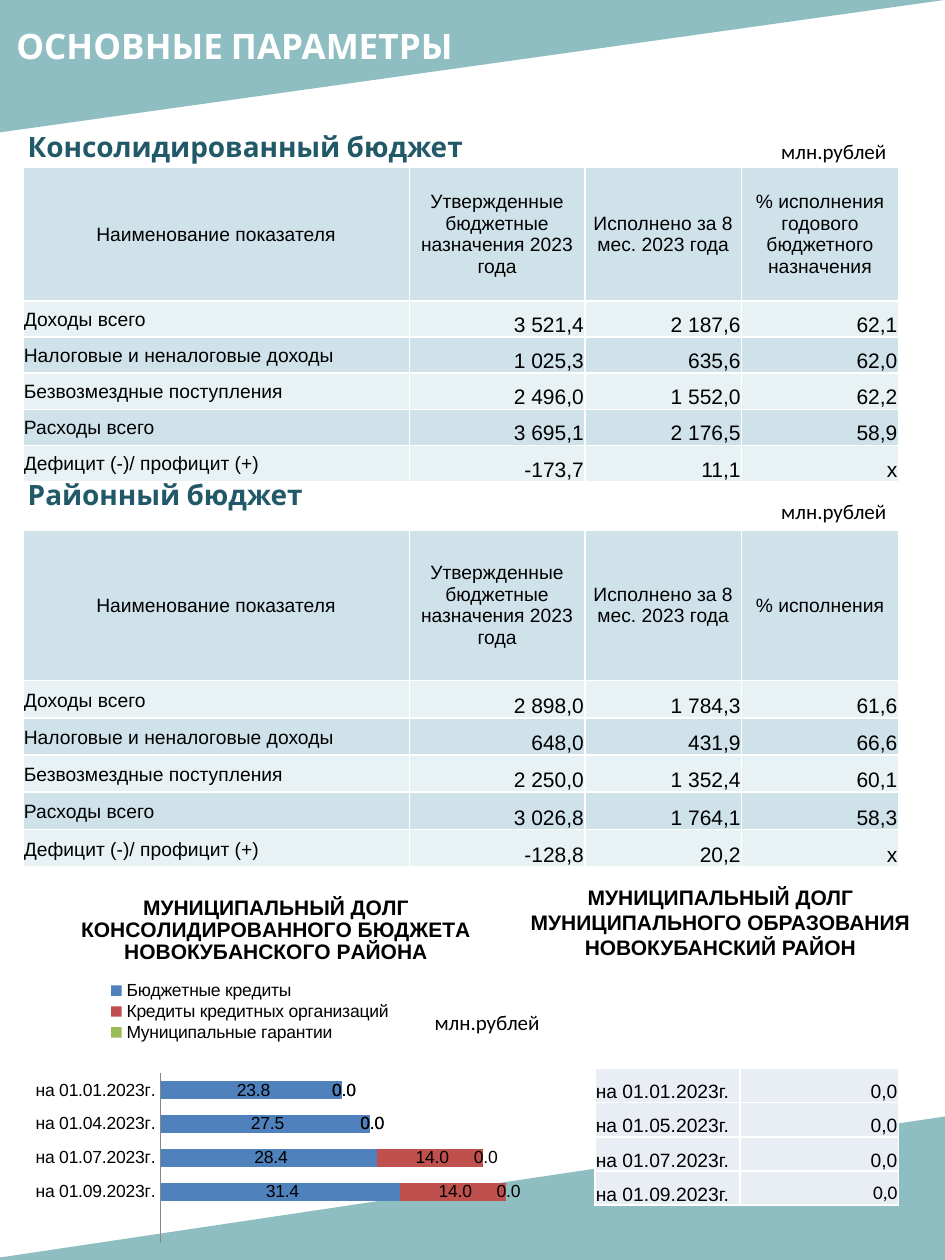
from collections import namedtuple
from dataclasses import dataclass

from lxml import etree
from pptx import Presentation
from pptx.chart.data import CategoryChartData
from pptx.dml.color import RGBColor
from pptx.enum.chart import XL_CHART_TYPE, XL_LEGEND_POSITION, XL_TICK_MARK
from pptx.enum.shapes import MSO_SHAPE
from pptx.enum.text import MSO_ANCHOR, PP_ALIGN
from pptx.oxml.ns import qn
from pptx.util import Cm, Pt

LEFT, CENTER, RIGHT = PP_ALIGN.LEFT, PP_ALIGN.CENTER, PP_ALIGN.RIGHT
MIDDLE, BOTTOM = MSO_ANCHOR.MIDDLE, MSO_ANCHOR.BOTTOM

Box = namedtuple("Box", "left top width height")  # centimetres


@dataclass(frozen=True)
class Theme:
    teal: str = "519AA0"
    heading: str = "215968"
    white: str = "FFFFFF"
    black: str = "000000"
    band_dark: str = "CFE2EA"
    band_light: str = "E8F1F4"
    debt_cell: str = "E9EDF4"
    axis: str = "868686"
    series: tuple = ("4F81BD", "C0504D", "9BBB59")
    display: str = "Cabin"
    body: str = "Arial"
    note: str = "Calibri"
    title_size: int = 20
    heading_size: int = 16
    figure_size: int = 12
    label_size: int = 11
    chart_size: int = 10


THEME = Theme()
UNIT = "млн.рублей"
INDICATORS = ["Доходы всего", "Налоговые и неналоговые доходы",
              "Безвозмездные поступления", "Расходы всего",
              "Дефицит (-)/ профицит (+)"]
CONSOLIDATED = [("3 521,4", "2 187,6", "62,1"), ("1 025,3", "635,6", "62,0"),
                ("2 496,0", "1 552,0", "62,2"), ("3 695,1", "2 176,5", "58,9"),
                ("-173,7", "11,1", "х")]
DISTRICT = [("2 898,0", "1 784,3", "61,6"), ("648,0", "431,9", "66,6"),
            ("2 250,0", "1 352,4", "60,1"), ("3 026,8", "1 764,1", "58,3"),
            ("-128,8", "20,2", "х")]
LOANS = {"Бюджетные кредиты": (23.8, 27.5, 28.4, 31.4, None),
         "Кредиты кредитных организаций": (0, 0, 14, 14, None),
         "Муниципальные гарантии": (0, 0, 0, 0, None)}


def color(code):
    return RGBColor.from_string(code)


def style_font(target, size, font=THEME.body, ink=THEME.black, bold=False):
    target.size, target.name, target.bold = Pt(size), font, bold
    target.color.rgb = color(ink)


def write(frame, text, align=LEFT, **style):
    """Fill a text frame, one paragraph per line of text."""
    frame.text = text
    for paragraph in frame.paragraphs:
        paragraph.alignment = align
        style_font(paragraph.runs[0].font, **style)


def add_text(slide, box, text, wrap=True, **style):
    frame = slide.shapes.add_textbox(*map(Cm, box)).text_frame
    frame.word_wrap = wrap
    write(frame, text, **style)


def add_unit(slide, left, top):
    add_text(slide, Box(left, top, 2.62, 0.76), UNIT, wrap=False,
             size=THEME.figure_size, font=THEME.note)


def add_wedge(slide, box, flip):
    wedge = slide.shapes.add_shape(MSO_SHAPE.RIGHT_TRIANGLE, *map(Cm, box))
    wedge.shadow.inherit = False
    wedge.line.fill.background()
    wedge.fill.solid()
    wedge.fill.fore_color.rgb = color(THEME.teal)
    tint = wedge.element.spPr.find(".//" + qn("a:srgbClr"))
    etree.SubElement(tint, qn("a:alpha"), val="64000")
    wedge.element.spPr.find(qn("a:xfrm")).set(flip, "1")


def add_grid(slide, box, columns, heights):
    """Add a plain table with the given column widths and row heights."""
    table = slide.shapes.add_table(len(heights), len(columns), *map(Cm, box)).table
    table.first_row = table.horz_banding = False
    for column, width in zip(table.columns, columns):
        column.width = Cm(width)
    for row, height in zip(table.rows, heights):
        row.height = Cm(height)
    return table


def fill_cell(cell, text, fill, anchor=BOTTOM, padding=(0.02, 0), **style):
    cell.margin_left = cell.margin_right = Cm(0.02)
    cell.margin_top, cell.margin_bottom = map(Cm, padding)
    cell.vertical_anchor = anchor
    write(cell.text_frame, text, **style)
    properties = cell._tc.get_or_add_tcPr()
    for side in ("a:lnL", "a:lnR", "a:lnT", "a:lnB"):
        border = etree.SubElement(properties, qn(side), w=str(Pt(0.96)))
        paint = etree.SubElement(border, qn("a:solidFill"))
        etree.SubElement(paint, qn("a:srgbClr"), val=THEME.white)
    cell.fill.solid()
    cell.fill.fore_color.rgb = color(fill)


def banner(slide, box):
    add_wedge(slide, box, "flipV")
    add_text(slide, Box(box.left + 0.08, box.top + 0.36, 12.37, 1.09),
             "ОСНОВНЫЕ ПАРАМЕТРЫ", size=THEME.title_size, font=THEME.display,
             ink=THEME.white, bold=True)


def budget_section(slide, box, name, share, figures, table_top, unit_top, header, row):
    """Heading, unit and table; the inner tops are offsets from the box."""
    add_text(slide, Box(box.left - 0.15, box.top, 12.37, 0.91), name,
             size=THEME.heading_size, font=THEME.display, ink=THEME.heading, bold=True)
    add_unit(slide, box.left + 15.04, box.top + unit_top)
    table = add_grid(slide, Box(box.left, box.top + table_top, box.width,
                                box.height - table_top),
                     (7.79, 3.54, 3.16, 3.16), [header] + [row] * len(figures))
    titles = ("Наименование показателя", "Утвержденные бюджетные назначения 2023 года",
              "Исполнено за 8 мес. 2023 года", share)
    label = {"size": THEME.label_size, "padding": (0.13, 0.13)}
    for index, title in enumerate(titles):
        fill_cell(table.cell(0, index), title, THEME.band_dark, anchor=MIDDLE,
                  align=CENTER, **label)
    for index, (indicator, values) in enumerate(zip(INDICATORS, figures), 1):
        band = THEME.band_light if index % 2 else THEME.band_dark
        fill_cell(table.cell(index, 0), indicator, band, **label)
        for place, value in enumerate(values, 1):
            fill_cell(table.cell(index, place), value, band, align=RIGHT,
                      size=THEME.figure_size)


def district_debt(slide, box):
    add_text(slide, Box(box.left, box.top, box.width, 2.31),
             "МУНИЦИПАЛЬНЫЙ ДОЛГ МУНИЦИПАЛЬНОГО ОБРАЗОВАНИЯ НОВОКУБАНСКИЙ РАЙОН",
             align=CENTER, size=THEME.figure_size, bold=True)
    months = ("01", "05", "07", "09")
    table = add_grid(slide, Box(box.left + 2.19, box.top + 3.84, 6.12, 2.76),
                     (2.93, 3.19), [0.69] * len(months))
    for row, month in enumerate(months):
        font = THEME.note if month == months[-1] else THEME.body
        fill_cell(table.cell(row, 0), f"на 01.{month}.2023г.", THEME.debt_cell,
                  size=THEME.label_size)
        fill_cell(table.cell(row, 1), "0,0", THEME.debt_cell, align=RIGHT,
                  size=THEME.label_size, font=font)


def manual_layout(inner=False, **fractions):
    layout = etree.Element(qn("c:layout"))
    manual = etree.SubElement(layout, qn("c:manualLayout"))
    if inner:
        etree.SubElement(manual, qn("c:layoutTarget"), val="inner")
    for axis in "xy":
        etree.SubElement(manual, qn(f"c:{axis}Mode"), val="edge")
    for key, value in fractions.items():
        etree.SubElement(manual, qn(f"c:{key}"), val=str(value))
    return layout


def consolidated_debt(slide, box):
    data = CategoryChartData(number_format="#\\ ##0.0")
    data.categories = [f"на 01.{month}.2023г." for month in ("01", "04", "07", "09")] + [""]
    for name, values in LOANS.items():
        data.add_series(name, values)
    chart = slide.shapes.add_chart(XL_CHART_TYPE.BAR_STACKED, *map(Cm, box), data).chart
    style_font(chart.font, THEME.chart_size)

    # Title and legend
    write(chart.chart_title.text_frame,
          "МУНИЦИПАЛЬНЫЙ ДОЛГ\nКОНСОЛИДИРОВАННОГО БЮДЖЕТА\nНОВОКУБАНСКОГО РАЙОНА",
          align=CENTER, size=THEME.figure_size, bold=True)
    chart.has_legend = True
    chart.legend.position = XL_LEGEND_POSITION.TOP
    chart.legend.include_in_layout = False
    style_font(chart.legend.font, THEME.chart_size)

    # Axes
    dates, amounts = chart.category_axis, chart.value_axis
    dates.reverse_order = True
    dates.major_tick_mark = XL_TICK_MARK.NONE
    dates.format.line.color.rgb = color(THEME.axis)
    amounts.minimum_scale, amounts.maximum_scale = 0, 50
    amounts.has_major_gridlines = amounts.visible = False

    # Bars
    plot = chart.plots[0]
    plot.gap_width, plot.overlap, plot.vary_by_categories = 95, 100, False
    for series, fill in zip(plot.series, THEME.series):
        series.format.fill.solid()
        series.format.fill.fore_color.rgb = color(fill)
        labels = series.data_labels
        labels.show_value = True
        labels.number_format, labels.number_format_is_linked = "#\\ ##0.0", False
        style_font(labels.font, THEME.chart_size)

    # Placement and clear background
    root = chart.element.find(qn("c:chart"))
    area = root.find(qn("c:plotArea"))
    for old in [*area.findall(qn("c:layout")), *root.findall(qn("c:title") + "/" + qn("c:layout"))]:
        old.getparent().remove(old)
    area.insert(0, manual_layout(inner=True, x=0.27, y=0.56, w=0.64, h=0.4))
    root.find(qn("c:title")).find(qn("c:tx")).addnext(manual_layout(x=0.13, y=0.13))
    root.find(qn("c:legend")).find(qn("c:legendPos")).addnext(
        manual_layout(x=0.17, y=0.34, w=0.5, h=0.15))
    background = etree.Element(qn("c:spPr"))
    etree.SubElement(background, qn("a:noFill"))
    etree.SubElement(etree.SubElement(background, qn("a:ln")), qn("a:noFill"))
    root.addnext(background)


def main():
    deck = Presentation()
    deck.slide_width, deck.slide_height = Cm(19.05), Cm(25.4)
    slide = deck.slides.add_slide(deck.slide_layouts[6])
    banner(slide, Box(0, 0, 19.05, 2.67))
    add_wedge(slide, Box(-0.33, 22.5, 19.43, 2.9), "flipH")
    budget_section(slide, Box(0.46, 2.49, 17.65, 7.16), "Консолидированный бюджет",
                   "% исполнения годового бюджетного назначения", CONSOLIDATED,
                   table_top=0.89, unit_top=0.18, header=2.69, row=0.72)
    budget_section(slide, Box(0.46, 9.5, 17.65, 8), "Районный бюджет", "% исполнения",
                   DISTRICT, table_top=1.19, unit_top=0.43, header=3.03, row=0.75)
    add_unit(slide, 8.51, 20.22)
    district_debt(slide, Box(9.8, 17.7, 9.45, 6.6))
    consolidated_debt(slide, Box(0, 16.84, 11.99, 8.56))
    deck.save("out.pptx")


if __name__ == "__main__":
    main()
